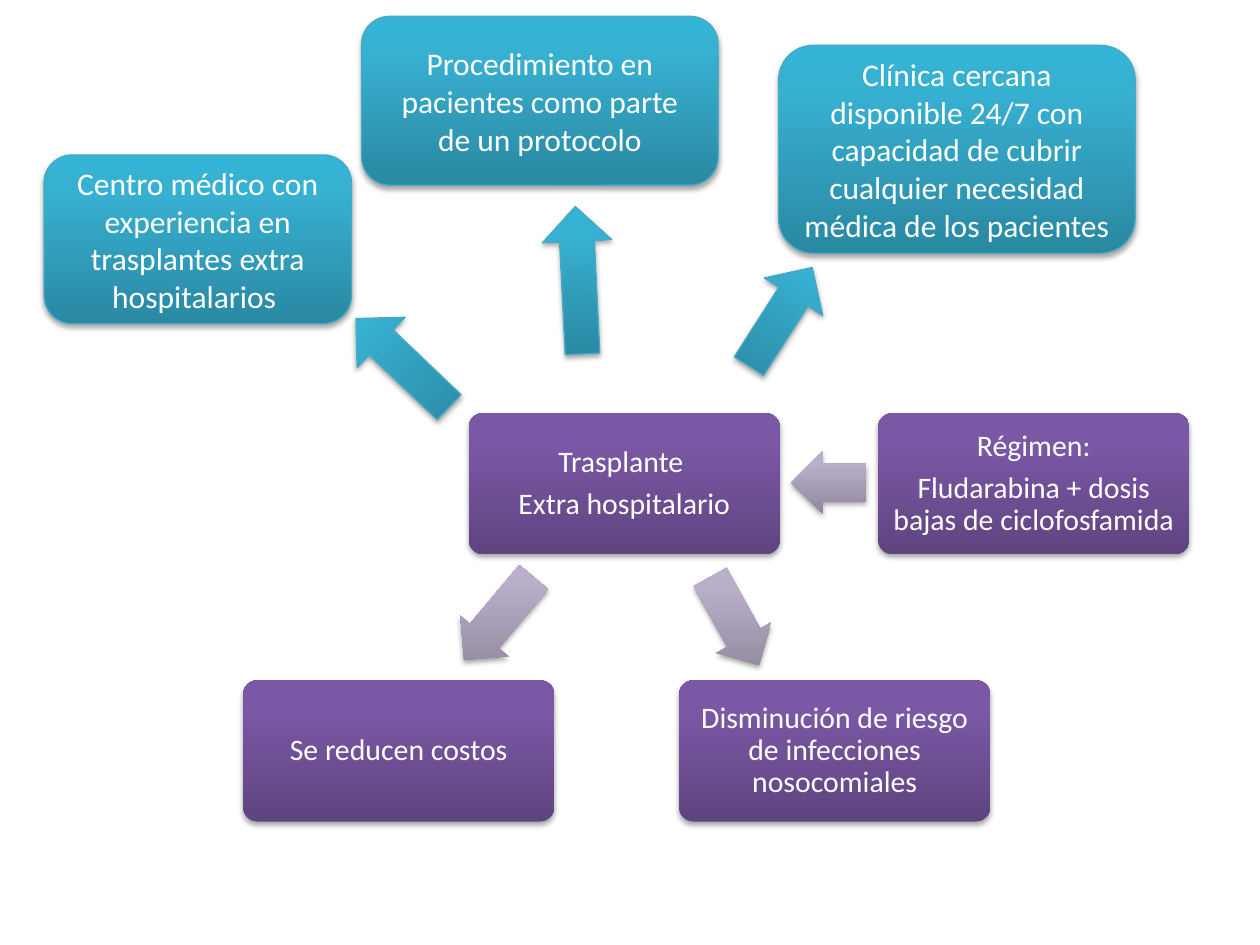
from lxml.etree import SubElement
from pptx import Presentation
from pptx.dml.color import RGBColor
from pptx.enum.shapes import MSO_SHAPE as Shape
from pptx.enum.text import MSO_ANCHOR as Anchor, PP_ALIGN as Align
from pptx.oxml.ns import qn
from pptx.util import Inches, Pt

COLORS = {
    "text": "FFFFFF",
    "teal_line": "46AAC5",
    "shadow": "000000",
}
GRADIENTS = {
    "purple": ("5F4480", "7B58A6", "7C57A8"),
    "lilac": ("8F869C", "BAAFCB", "BAAFCC"),
    "teal": ("2A88A2", "37B1D2", "34B4D6"),
}
STOPS = (0, 80000, 100000)


class DiagramSlide:
    font = "Calibri"

    def __init__(self, slide):
        self.slide = slide

    def add_element(self, kind, left, top, width, height, palette, rotation=0):
        shape = self.slide.shapes.add_shape(
            kind, Inches(left), Inches(top), Inches(width), Inches(height))
        shape.rotation = rotation
        self.apply_gradient(shape, palette)
        if palette == "teal":
            shape.line.color.rgb = RGBColor.from_string(COLORS["teal_line"])
            shape.line.width = Pt(0.75)
        else:
            shape.line.fill.background()
        self.apply_shadow(shape)
        return shape

    def apply_gradient(self, shape, palette):
        shape.fill.gradient()
        gradient = shape.element.spPr.find(qn("a:gradFill"))
        gradient.clear()
        gradient.set("rotWithShape", "1" if palette == "teal" else "0")
        stops = SubElement(gradient, qn("a:gsLst"))
        for position, color in zip(STOPS, GRADIENTS[palette]):
            stop = SubElement(stops, qn("a:gs"), pos=str(position))
            SubElement(stop, qn("a:srgbClr"), val=color)
        SubElement(gradient, qn("a:lin"), ang="16200000", scaled="0")

    def apply_shadow(self, shape):
        shape.shadow.inherit = False
        effects = shape.element.spPr.find(qn("a:effectLst"))
        shadow = SubElement(
            effects, qn("a:outerShdw"), blurRad=str(Pt(3.1)),
            dist=str(Pt(1.8)), dir="5400000", rotWithShape="0")
        color = SubElement(shadow, qn("a:srgbClr"), val=COLORS["shadow"])
        SubElement(color, qn("a:alpha"), val="35000")

    def set_text(self, shape, lines, size):
        frame = shape.text_frame
        frame.word_wrap = True
        frame.vertical_anchor = Anchor.MIDDLE
        frame.text = "\n".join(lines)
        for paragraph in frame.paragraphs:
            paragraph.alignment = Align.CENTER
            paragraph.font.name = self.font
            paragraph.font.size = Pt(size)
            paragraph.font.color.rgb = RGBColor.from_string(COLORS["text"])
        return frame

    def add_requirement(self, left, top, width, height, text):
        shape = self.add_element(
            Shape.ROUNDED_RECTANGLE, left, top, width, height, "teal")
        self.set_text(shape, [text], 18)

    def add_node(self, left, top, *lines):
        shape = self.add_element(
            Shape.ROUNDED_RECTANGLE, left, top, 2.47, 1.12, "purple")
        shape.adjustments[0] = 0.1
        frame = self.set_text(shape, lines, 17)
        frame.margin_left = frame.margin_right = Inches(0.07)
        frame.margin_top = frame.margin_bottom = Inches(0.07)
        for paragraph in frame.paragraphs:
            paragraph.line_spacing = 0.9
            paragraph.space_after = Pt(6)

    def add_node_arrow(self, left, top, length, rotation):
        shape = self.add_element(
            Shape.RIGHT_ARROW, left, top, length, 0.5, "lilac", rotation)
        shape.adjustments[0] = 0.6
        shape.adjustments[1] = 0.5

    def add_requirement_arrow(self, left, top, length, rotation):
        self.add_element(
            Shape.UP_ARROW, left, top, 0.55, length, "teal", rotation)


def main():
    presentation = Presentation()
    presentation.slide_width = Inches(10)
    presentation.slide_height = Inches(7.5)
    diagram = DiagramSlide(
        presentation.slides.add_slide(presentation.slide_layouts[6]))

    middle_row, bottom_row = 3.28, 5.4
    diagram.add_node(6.97, middle_row, "Régimen:",
                     "Fludarabina + dosis bajas de ciclofosfamida")
    diagram.add_node(3.72, middle_row, "Trasplante ", "Extra hospitalario")
    diagram.add_node(1.93, bottom_row, "Se reducen costos")
    diagram.add_node(5.39, bottom_row,
                     "Disminución de riesgo de infecciones nosocomiales")
    for arrow in ((6.28, 3.58, 0.59, 180),
                  (3.53, 4.66, 0.86, 130.1),
                  (5.43, 4.68, 0.8, 60.9)):
        diagram.add_node_arrow(*arrow)

    diagram.add_requirement(
        0.35, 1.23, 2.44, 1.34,
        "Centro médico con experiencia en trasplantes extra hospitalarios ")
    diagram.add_requirement(
        2.87, 0.13, 2.83, 1.34,
        "Procedimiento en pacientes como parte de un protocolo")
    diagram.add_requirement(
        6.18, 0.36, 2.83, 1.65,
        "Clínica cercana disponible 24/7 con capacidad de cubrir "
        "cualquier necesidad médica de los pacientes")
    for arrow in ((2.92, 2.37, 1.02, 313.6),
                  (4.32, 1.64, 1.17, 357.2),
                  (5.92, 2.05, 0.93, 32.7)):
        diagram.add_requirement_arrow(*arrow)

    presentation.save("out.pptx")


if __name__ == "__main__":
    main()
